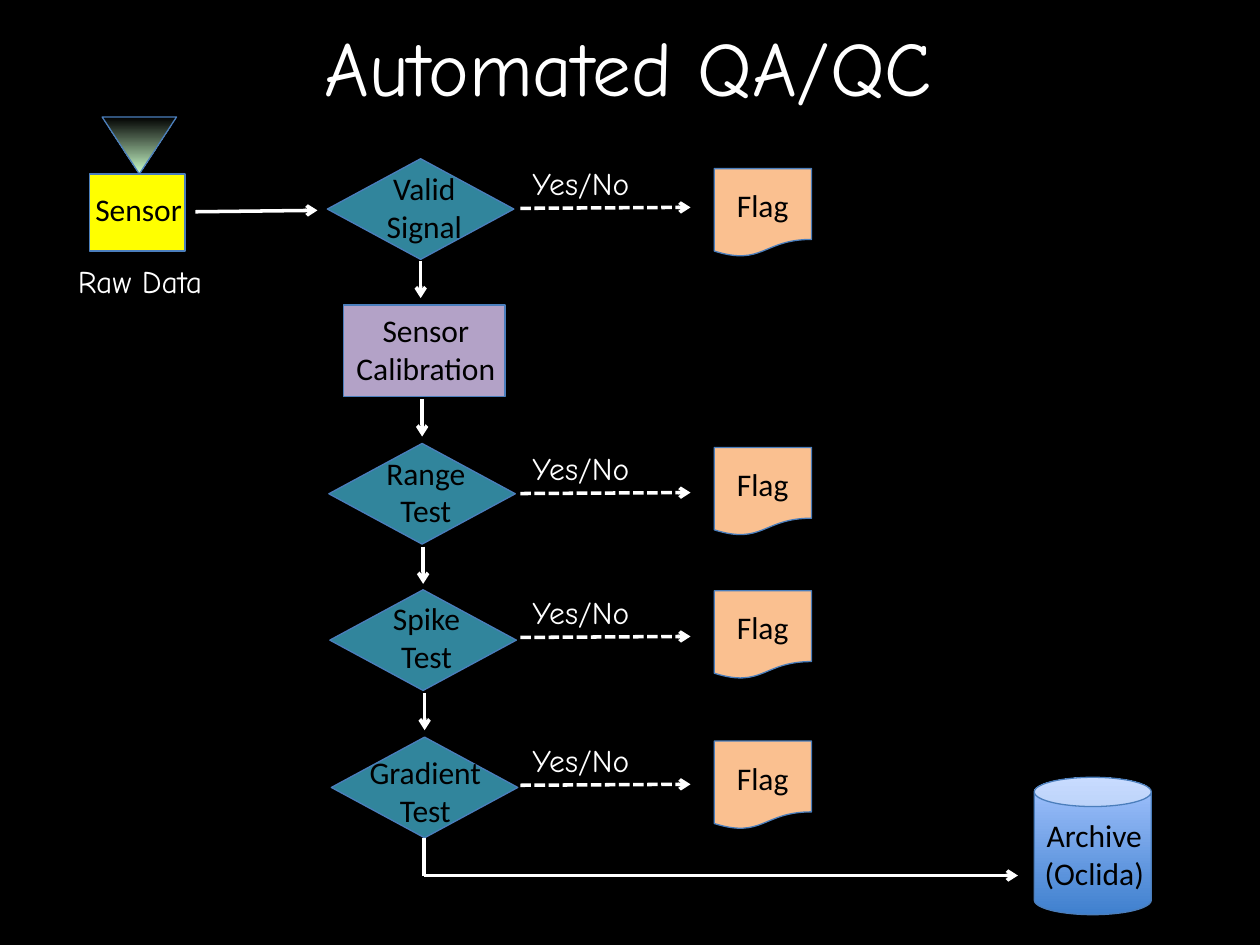
from lxml import etree
from pptx import Presentation
from pptx.dml.color import RGBColor
from pptx.enum import dml, shapes, text
from pptx.oxml.ns import qn
from pptx.util import Cm, Pt

BLACK = RGBColor(0x00, 0x00, 0x00)
WHITE = RGBColor(0xFF, 0xFF, 0xFF)
OUTLINE = RGBColor(0x4B, 0x7E, 0xBC)
YELLOW = RGBColor(0xFF, 0xFF, 0x00)
PURPLE = RGBColor(0xB3, 0xA2, 0xC7)
TEAL = RGBColor(0x31, 0x85, 0x9C)
PEACH = RGBColor(0xFA, 0xC0, 0x90)
PALE_GREEN = RGBColor(0xCC, 0xFF, 0xCC)
BLUE = RGBColor(0x3F, 0x80, 0xCE)
LIGHT_BLUE = RGBColor(0xA4, 0xC4, 0xFF)
BODY_FONT, HAND_FONT = "Calibri", "Comic Neue"
MSO = shapes.MSO_SHAPE

prs = Presentation()
prs.slide_width, prs.slide_height = Cm(25.4), Cm(19.05)
s = prs.slides.add_slide(prs.slide_layouts[5])
s.background.fill.solid()
s.background.fill.fore_color.rgb = BLACK


def add_label(lines, left, top, width, font=BODY_FONT, color=BLACK):
    """Add a centred 18 pt label, one paragraph for each line."""
    sp = s.shapes.add_textbox(Cm(left), Cm(top), Cm(width), Cm(0.28 + 0.76 * len(lines)))
    tf = sp.text_frame
    tf.word_wrap = False
    tf.text = "\n".join(lines)
    for p in tf.paragraphs:
        p.alignment = text.PP_ALIGN.CENTER
        p.font.name, p.font.size, p.font.color.rgb = font, Pt(18), color


def add_line(x1, y1, x2, y2, dashed=False, arrow=True):
    cxn = s.shapes.add_connector(shapes.MSO_CONNECTOR.STRAIGHT, Cm(x1), Cm(y1), Cm(x2), Cm(y2))
    cxn.line.color.rgb, cxn.line.width = WHITE, Pt(2)
    if dashed:
        cxn.line.dash_style = dml.MSO_LINE.SQUARE_DOT
    sp_pr = cxn.element.spPr
    if arrow:
        etree.SubElement(sp_pr.find(qn("a:ln")), qn("a:tailEnd"), type="arrow")
    etree.SubElement(sp_pr, qn("a:effectLst"))


# Title
title = s.shapes.title
title.left, title.top, title.width, title.height = Cm(5.87), Cm(0.25), Cm(13.61), Cm(2.13)
tf = title.text_frame
tf.word_wrap = False
tf.text = "Automated QA/QC"
p = tf.paragraphs[0]
p.alignment = text.PP_ALIGN.CENTER
p.font.name, p.font.size, p.font.color.rgb = HAND_FONT, Pt(44), WHITE

# Tests: diamond left and top, label lines, label left, top and width, branch y, flag top
tests = [
    (6.60, 3.20, ["Valid", "Signal"], 7.49, 3.28, 2.13, 4.20, 3.40),
    (6.63, 8.94, ["Range", "Test"], 7.52, 9.02, 2.13, 9.95, 9.02),
    (6.65, 11.89, ["Spike", "Test"], 7.65, 11.96, 1.90, 12.85, 11.91),
    (6.68, 14.86, ["Gradient", "Test"], 7.18, 15.06, 2.79, 15.83, 14.94),
]

# Boxes: shape, left, top, width, height, fill (two colours make a gradient), angle
boxes = [
    (MSO.RECTANGLE, 1.80, 3.51, 1.93, 1.55, [YELLOW], 0),
    (MSO.ISOSCELES_TRIANGLE, 2.06, 2.36, 1.50, 1.15, [PALE_GREEN, BLACK], 270),
    (MSO.RECTANGLE, 6.93, 6.15, 3.25, 1.85, [PURPLE], 0),
    (MSO.CAN, 20.85, 15.67, 2.36, 2.77, [BLUE, LIGHT_BLUE], 90),
]
for left, top, *_, flag_top in tests:
    boxes.append((MSO.DIAMOND, left, top, 3.76, 2.03, [TEAL], 0))
    boxes.append((MSO.FLOWCHART_DOCUMENT, 14.40, flag_top, 1.96, 1.78, [PEACH], 0))

for kind, left, top, width, height, colors, angle in boxes:
    sp = s.shapes.add_shape(kind, Cm(left), Cm(top), Cm(width), Cm(height))
    sp.shadow.inherit = False
    sp.line.color.rgb, sp.line.width = OUTLINE, Pt(0.75)
    if len(colors) == 1:
        sp.fill.solid()
        sp.fill.fore_color.rgb = colors[0]
    else:
        sp.fill.gradient()
        sp.fill.gradient_angle = angle
        for stop, color in zip(sp.fill.gradient_stops, colors):
            stop.color.rgb = color
    if kind == MSO.ISOSCELES_TRIANGLE:
        sp.element.spPr.find(qn("a:xfrm")).set("flipV", "1")

# Test labels and their flag branches
for _, _, lines, left, top, width, branch_y, flag_top in tests:
    add_label(lines, left, top, width)
    add_line(10.49, branch_y, 13.92, branch_y - 0.02, dashed=True)
    add_label(["Yes/No"], 10.44, branch_y - 1.02, 2.54, HAND_FONT, WHITE)
    add_label(["Flag"], 14.59, flag_top + 0.23, 1.57)

# Remaining labels
add_label(["Sensor"], 1.65, 3.71, 2.29)
add_label(["Raw Data"], 1.20, 5.16, 3.25, HAND_FONT, WHITE)
add_label(["Sensor", "Calibration"], 6.91, 6.15, 3.35)
add_label(["Archive", "(Oclida)"], 20.46, 16.33, 3.20)

# Main flow
add_line(3.94, 4.27, 6.40, 4.24)
for x, y in [(8.48, 5.26), (8.51, 8.05), (8.53, 11.02), (8.56, 13.97)]:
    add_line(x, y, x, y + 0.75)
add_line(8.55, 16.89, 8.55, 17.65, arrow=False)
add_line(8.55, 17.65, 20.52, 17.65)

prs.save("out.pptx")
